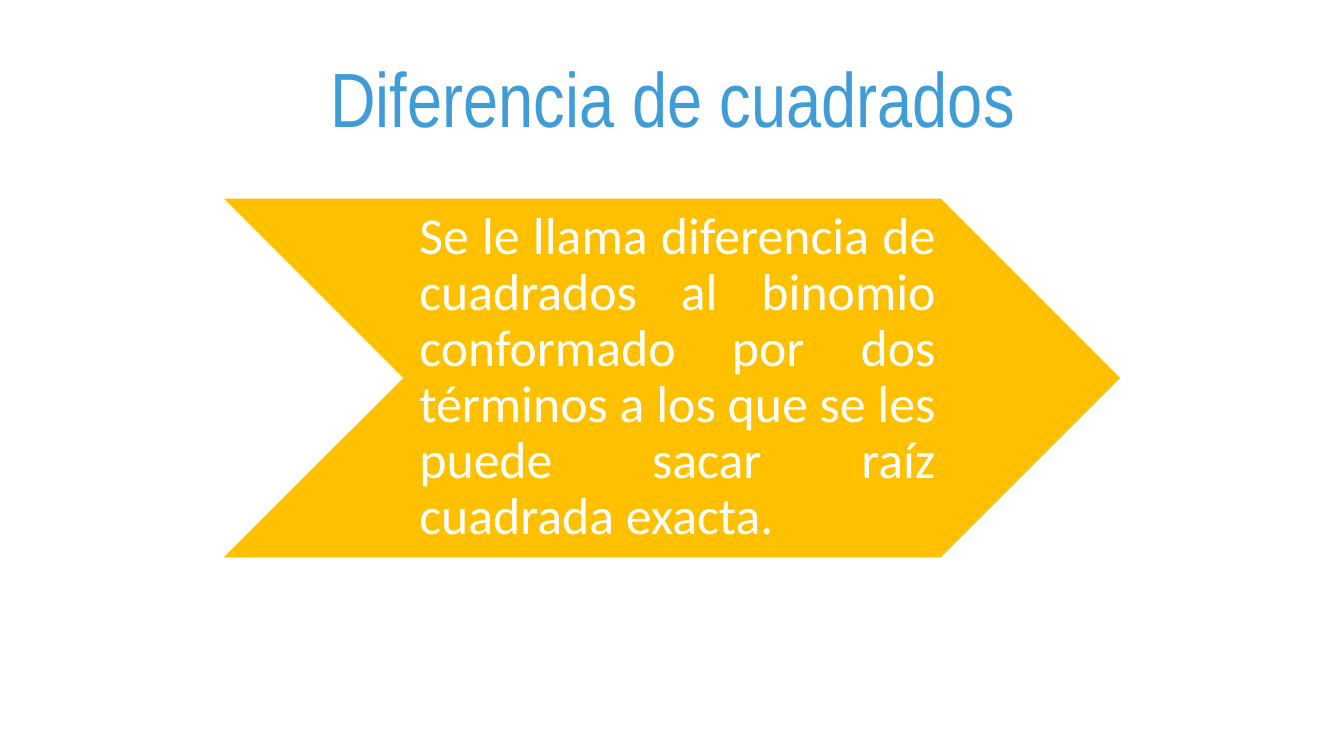
from pptx import Presentation
from pptx.dml.color import RGBColor
from pptx.enum.shapes import MSO_SHAPE
from pptx.enum.text import MSO_ANCHOR, PP_ALIGN
from pptx.util import Inches, Pt

BLUE = RGBColor(0x40, 0x9C, 0xD6)
AMBER = RGBColor(0xFF, 0xC0, 0x00)
WHITE = RGBColor(0xFF, 0xFF, 0xFF)


def add_text(s, text, left, top, width, height, *, font, size, color, align, inset=0.1):
    tb = s.shapes.add_textbox(Inches(left), Inches(top), Inches(width), Inches(height))
    tf = tb.text_frame
    tf.word_wrap = True
    tf.vertical_anchor = MSO_ANCHOR.MIDDLE
    tf.margin_left = Inches(inset)
    tf.margin_right = tf.margin_top = tf.margin_bottom = Inches(0.05)
    p = tf.paragraphs[0]
    p.alignment = align
    p.line_spacing = 0.9
    r = p.add_run()
    r.text = text
    r.font.name = font
    r.font.size = Pt(size)
    r.font.color.rgb = color


def add_chevron(s, left, top, width, height, color):
    sp = s.shapes.add_shape(
        MSO_SHAPE.CHEVRON, Inches(left), Inches(top), Inches(width), Inches(height)
    )
    sp.shadow.inherit = False
    sp.fill.solid()
    sp.fill.fore_color.rgb = color
    sp.line.fill.background()


def main():
    prs = Presentation()
    prs.slide_width = Inches(13.33)
    prs.slide_height = Inches(7.5)
    s = prs.slides.add_slide(prs.slide_layouts[6])
    add_text(s, "Diferencia de cuadrados", 1.71, 0.29, 9.92, 1.45,
             font="Arial Narrow", size=55, color=BLUE, align=PP_ALIGN.CENTER, inset=0.05)
    add_chevron(s, 2.22, 1.97, 8.89, 3.56, AMBER)
    add_text(s, "Se le llama diferencia de cuadrados al binomio conformado por dos "
             "términos a los que se les puede sacar raíz cuadrada exacta.",
             4, 1.97, 5.33, 3.56,
             font="Calibri", size=37, color=WHITE, align=PP_ALIGN.JUSTIFY, inset=0.16)
    prs.save("out.pptx")


if __name__ == "__main__":
    main()
